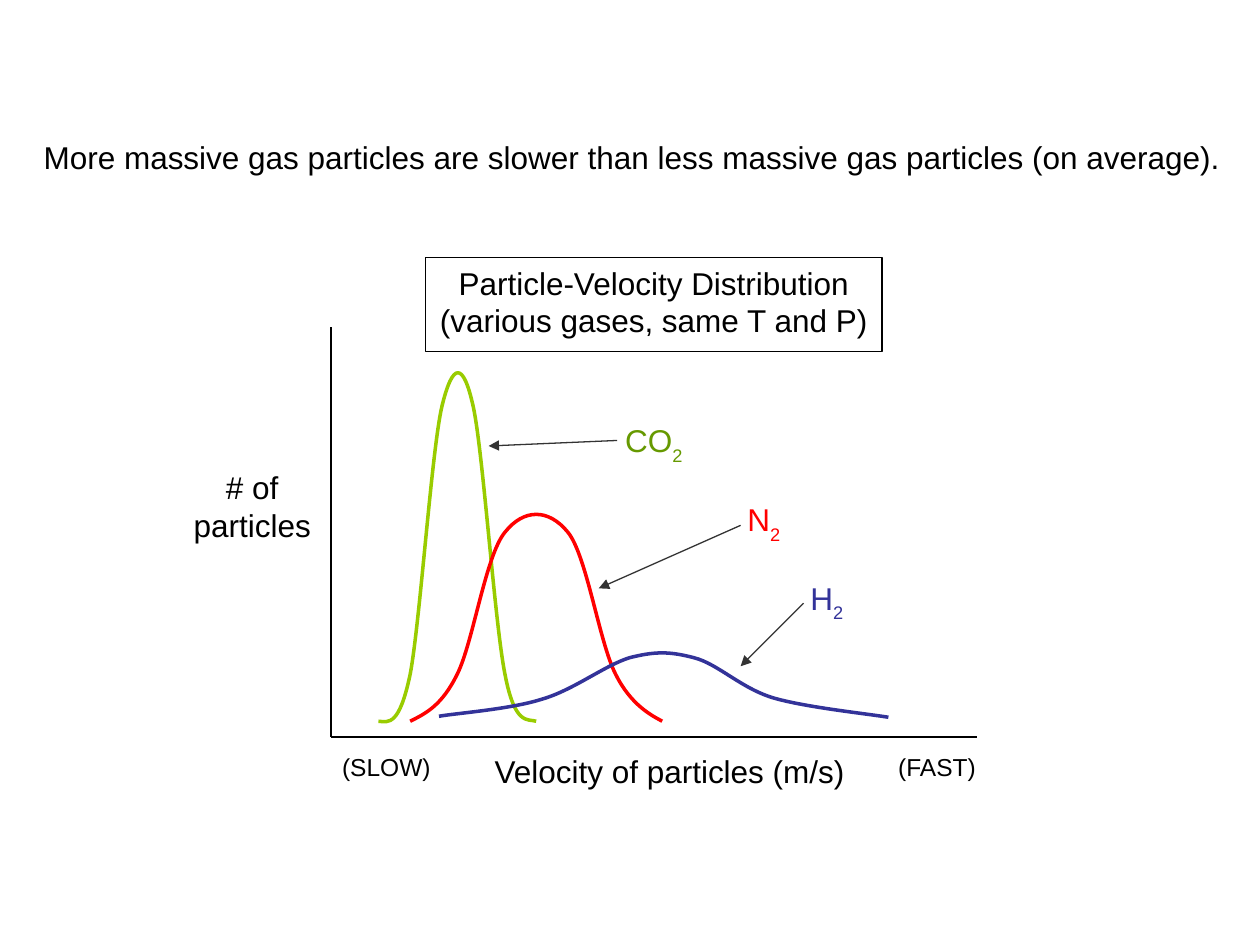
from lxml import etree
from pptx import Presentation
from pptx.dml.color import RGBColor
from pptx.enum.shapes import MSO_CONNECTOR, MSO_SHAPE
from pptx.enum.text import MSO_ANCHOR, PP_ALIGN
from pptx.oxml.ns import qn
from pptx.util import Cm, Pt

STRAIGHT = MSO_CONNECTOR.STRAIGHT
RECT = MSO_SHAPE.RECTANGLE
TOP = MSO_ANCHOR.TOP
LEFT, CENTER = PP_ALIGN.LEFT, PP_ALIGN.CENTER

GASES = [
    {"name": "CO", "ink": "669900", "color": "99CC00",
     "label": (5.4, 1.77), "arrow": (5.77, 2.28, 3.18, 2.39),
     "curve": [(0.96, 7.94),
               (1.17, 7.96), (1.38, 8.04), (1.6, 6.99),
               (1.8, 5.93), (2.03, 2.5), (2.24, 1.59),
               (2.46, 0.69), (2.67, 0.69), (2.87, 1.59),
               (3.07, 2.5), (3.3, 5.93), (3.51, 6.99),
               (3.71, 8.04), (3.97, 7.89), (4.14, 7.94)]},
    {"name": "N", "ink": "FF0000", "color": "FF0000",
     "label": (7.62, 3.36), "arrow": (8.26, 3.99, 5.4, 5.26),
     "curve": [(1.6, 7.94),
               (1.92, 7.78), (2.24, 7.62), (2.55, 6.99),
               (2.87, 6.35), (3.12, 4.6), (3.51, 4.13),
               (3.89, 3.65), (4.39, 3.65), (4.78, 4.13),
               (5.16, 4.6), (5.41, 6.35), (5.74, 6.99),
               (6.05, 7.62), (6.48, 7.83), (6.68, 7.94)]},
    {"name": "H", "ink": "333399", "color": "333399",
     "label": (8.89, 4.94), "arrow": (9.53, 5.56, 8.26, 6.83),
     "curve": [(2.18, 7.84),
               (2.51, 7.78), (3.61, 7.7), (4.24, 7.5),
               (4.88, 7.32), (5.51, 6.82), (6.02, 6.66),
               (6.53, 6.53), (6.83, 6.53), (7.32, 6.66),
               (7.8, 6.78), (8.26, 7.27), (8.92, 7.47),
               (9.58, 7.66), (10.74, 7.78), (11.24, 7.86)]},
]


def paint(target, color):
    target.rgb = RGBColor.from_string(color)


def fill_text(shape, lines, size=18, color="000000", align=CENTER):
    frame = shape.text_frame
    frame.word_wrap = True
    frame.vertical_anchor = TOP
    frame.text = "\n".join(lines)
    for para in frame.paragraphs:
        para.alignment = align
        para.font.name = "Arial"
        para.font.size = Pt(size)
        paint(para.font.color, color)
    return frame


def add_text(slide, x, y, w, h, lines, **look):
    box = slide.shapes.add_textbox(Cm(x), Cm(y), Cm(w), Cm(h))
    return fill_text(box, lines, **look)


def add_line(slide, x1, y1, x2, y2, color, width, arrow=False):
    link = slide.shapes.add_connector(STRAIGHT, Cm(x1), Cm(y1), Cm(x2), Cm(y2))
    paint(link.line.color, color)
    link.line.width = Pt(width)
    props = link.line._get_or_add_ln()
    if arrow:
        etree.SubElement(props, qn("a:tailEnd"), type="triangle")
    etree.SubElement(props.getparent(), qn("a:effectLst"))


def bend(shape):
    legs = list(shape._element.iter(qn("a:lnTo")))
    for i in range(0, len(legs), 3):
        arc = etree.SubElement(legs[i].getparent(), qn("a:cubicBezTo"))
        for leg in legs[i:i + 3]:
            arc.append(leg[0])
            leg.getparent().remove(leg)


def add_curve(slide, left, top, knots, color):
    points = [(Cm(left + x), Cm(top + y)) for x, y in knots]
    pen = slide.shapes.build_freeform(*points[0])
    pen.add_line_segments(points[1:], close=False)
    curve = pen.convert_to_shape()
    bend(curve)
    curve.shadow.inherit = False
    curve.fill.background()
    paint(curve.line.color, color)
    curve.line.width = Pt(2)


def add_lead(slide, left, top, width, height):
    frame = add_text(slide, left, top, width, height,
                     ["More massive gas particles are slower than "
                      "less massive gas particles (on average)."], align=LEFT)
    frame.word_wrap = False


def add_plot(slide, left, top, width, height):
    base = top + height
    add_line(slide, left, top, left, base, "000000", 1.25)
    add_line(slide, left, base, left + width, base, "000000", 1.25)
    for gas in GASES:
        add_curve(slide, left, top, gas["curve"], gas["color"])

    head = slide.shapes.add_shape(RECT, Cm(left + 1.91), Cm(top - 1.41),
                                  Cm(9.2), Cm(1.9))
    head.shadow.inherit = False
    head.fill.background()
    paint(head.line.color, "000000")
    head.line.width = Pt(0.75)
    fill_text(head, ["Particle-Velocity Distribution",
                     "(various gases, same T and P)"])

    add_text(slide, left - 3.81, top + 2.72, 4.45, 1.9, ["# of", "particles"])
    foot = base + 0.18
    add_text(slide, left + 2.87, foot, 7.92, 1.27, ["Velocity of particles (m/s)"])
    add_text(slide, left - 0.3, foot, 2.84, 1.27, ["(SLOW)"], size=14)
    add_text(slide, left + 10.8, foot, 2.84, 1.27, ["(FAST)"], size=14)

    for gas in GASES:
        x, y = gas["label"]
        frame = add_text(slide, left + x, top + y, 2.22, 1.27,
                         [gas["name"]], color=gas["ink"])
        sub = frame.paragraphs[0].add_run()
        sub.text = "2"
        sub.font._element.set("baseline", "-30000")
        x1, y1, x2, y2 = gas["arrow"]
        add_line(slide, left + x1, top + y1, left + x2, top + y2,
                 "333333", 0.75, arrow=True)


def main():
    deck = Presentation()
    deck.slide_width, deck.slide_height = Cm(25.4), Cm(19.05)
    slide = deck.slides.add_slide(deck.slide_layouts[6])
    add_plot(slide, 6.67, 6.6, 13.02, 8.26)
    add_lead(slide, 0.63, 2.65, 24.38, 1.78)
    deck.save("out.pptx")


if __name__ == "__main__":
    main()
